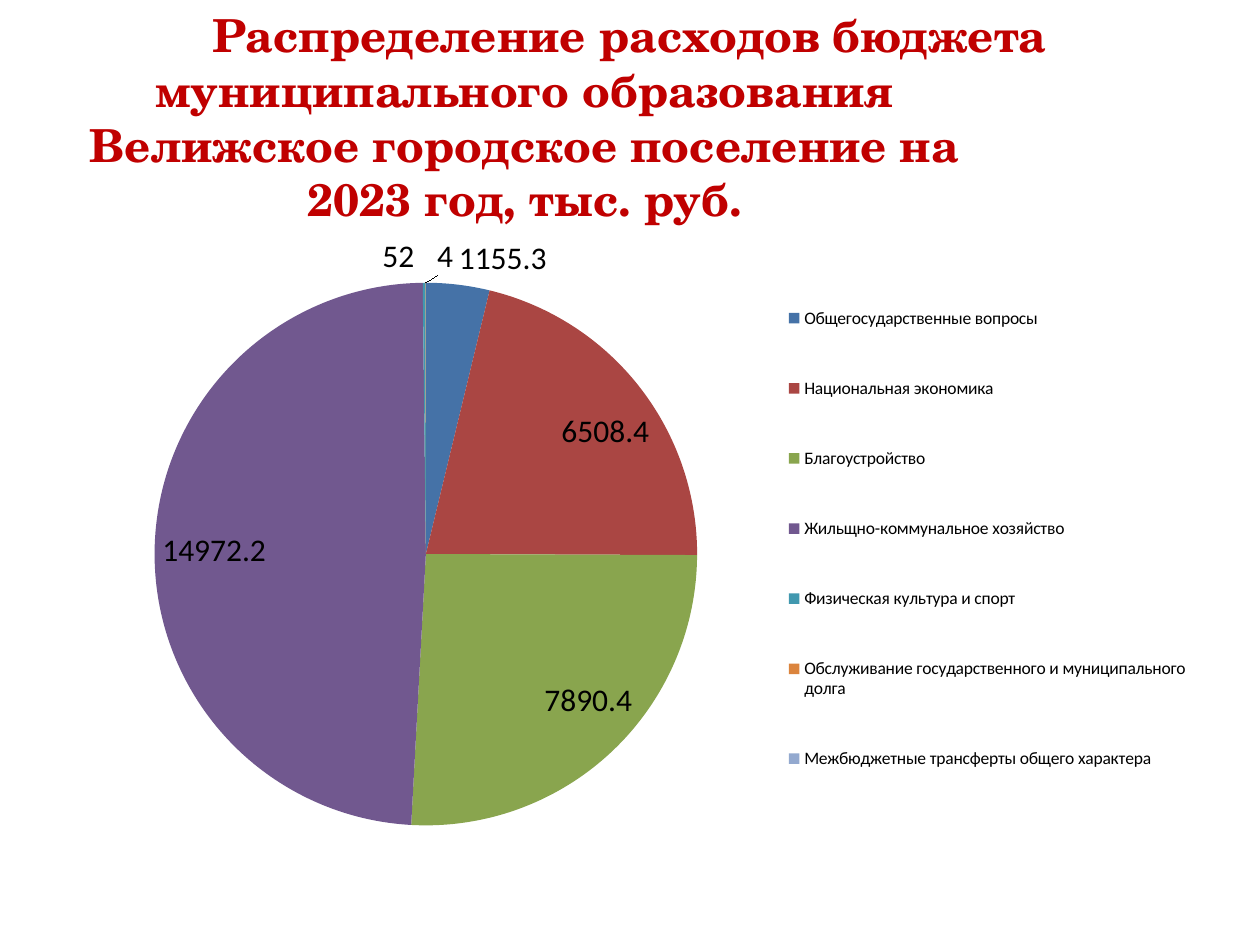
from dataclasses import dataclass

from lxml.etree import SubElement
from pptx import Presentation
from pptx.chart.data import CategoryChartData
from pptx.dml.color import RGBColor
from pptx.enum.chart import XL_CHART_TYPE as ChartType
from pptx.enum.chart import XL_LABEL_POSITION as LabelPos
from pptx.enum.chart import XL_LEGEND_POSITION as LegendPos
from pptx.enum.text import MSO_ANCHOR, MSO_AUTO_SIZE, PP_ALIGN
from pptx.oxml.ns import qn
from pptx.util import Inches, Pt


@dataclass(frozen=True)
class Theme:
    title_font: str = "TeX Gyre Schola"
    chart_font: str = "Calibri"
    title_color: str = "C00000"
    text_color: str = "000000"
    title_size: int = 26
    label_size: int = 18
    legend_size: int = 10


THEME = Theme()

# Paragraph text and right indent in inches
TITLE = [
    ("Распределение расходов бюджета", 0),
    ("муниципального образования", 1.67),
    ("Велижское городское поселение на 2023 год, тыс. руб.", 0),
]

# Category, thousand roubles, slice colour
EXPENSES = [
    ("Общегосударственные вопросы", 1155.3, "4572A7"),
    ("Национальная экономика", 6508.4, "AA4643"),
    ("Благоустройство", 7890.4, "89A54E"),
    ("Жильщно-коммунальное хозяйство", 14972.2, "71588F"),
    ("Физическая культура и спорт", 52, "4198AF"),
    ("Обслуживание государственного и муниципального долга", 4, "DB843D"),
    ("Межбюджетные трансферты общего характера", 0, "93A9CF"),
]


def style_font(font, size, color, name):
    font.size = Pt(size)
    font.name = name
    font.color.rgb = RGBColor.from_string(color)


def fill_title(shape):
    shape.left, shape.top = Inches(0.5), Inches(0.3)
    shape.width, shape.height = Inches(9), Inches(1.25)
    tf = shape.text_frame
    tf.word_wrap = True
    tf.auto_size = MSO_AUTO_SIZE.NONE
    tf.vertical_anchor = MSO_ANCHOR.MIDDLE
    tf.text = "\n".join(text for text, _ in TITLE)
    for p, (_, indent) in zip(tf.paragraphs, TITLE):
        p.alignment = PP_ALIGN.CENTER
        p.space_before = Pt(0)
        p.font.bold = True
        style_font(p.font, THEME.title_size, THEME.title_color, THEME.title_font)
        if indent:
            p._p.get_or_add_pPr().set("marR", str(Inches(indent)))


def set_layout(parent, after, x, y, w, h, inner=False):
    """Place a chart part, in fractions of the chart, after the named child."""
    for old in parent.findall(qn("c:layout")):
        parent.remove(old)
    layout = SubElement(parent, qn("c:layout"))
    manual = SubElement(layout, qn("c:manualLayout"))
    if inner:
        SubElement(manual, qn("c:layoutTarget")).set("val", "inner")
    for mode in ("xMode", "yMode"):
        SubElement(manual, qn(f"c:{mode}")).set("val", "edge")
    for key, value in zip("xywh", (x, y, w, h)):
        SubElement(manual, qn(f"c:{key}")).set("val", str(value))
    if after is None:
        parent.insert(0, layout)
    else:
        parent.find(qn(after)).addnext(layout)


def add_expense_pie(s):
    data = CategoryChartData()
    data.categories = [name for name, _, _ in EXPENSES]
    data.add_series("Series 1", [value for _, value, _ in EXPENSES])
    chart = s.shapes.add_chart(ChartType.PIE, Inches(0.5), Inches(1.75),
                               Inches(9), Inches(4.95), data).chart
    style_font(chart.font, THEME.label_size, THEME.text_color, THEME.chart_font)
    chart.has_title = False

    chart.has_legend = True
    legend = chart.legend
    legend.position = LegendPos.RIGHT
    legend.include_in_layout = False
    style_font(legend.font, THEME.legend_size, THEME.text_color, THEME.chart_font)
    set_layout(legend._element, "c:legendPos", 0.63, 0.06, 0.37, 0.9)

    plot = chart.plots[0]
    plot.vary_by_categories = True
    for i, (_, _, color) in enumerate(EXPENSES):
        fill = plot.series[0].points[i].format.fill
        fill.solid()
        fill.fore_color.rgb = RGBColor.from_string(color)

    plot.has_data_labels = True
    labels = plot.data_labels
    labels.show_value = True
    labels.position = LabelPos.BEST_FIT
    labels.number_format = "General;;"  # leaves zero unlabelled
    labels.number_format_is_linked = False
    style_font(labels.font, THEME.label_size, THEME.text_color, THEME.chart_font)
    plot_area = chart._chartSpace.chart.plotArea
    set_layout(plot_area, None, 0.08, 0.1, 0.48, 0.87, inner=True)


def main():
    prs = Presentation()
    prs.slide_width, prs.slide_height = Inches(10), Inches(7.5)
    s = prs.slides.add_slide(prs.slide_layouts[5])
    fill_title(s.shapes.title)
    add_expense_pie(s)
    prs.save("out.pptx")


if __name__ == "__main__":
    main()
